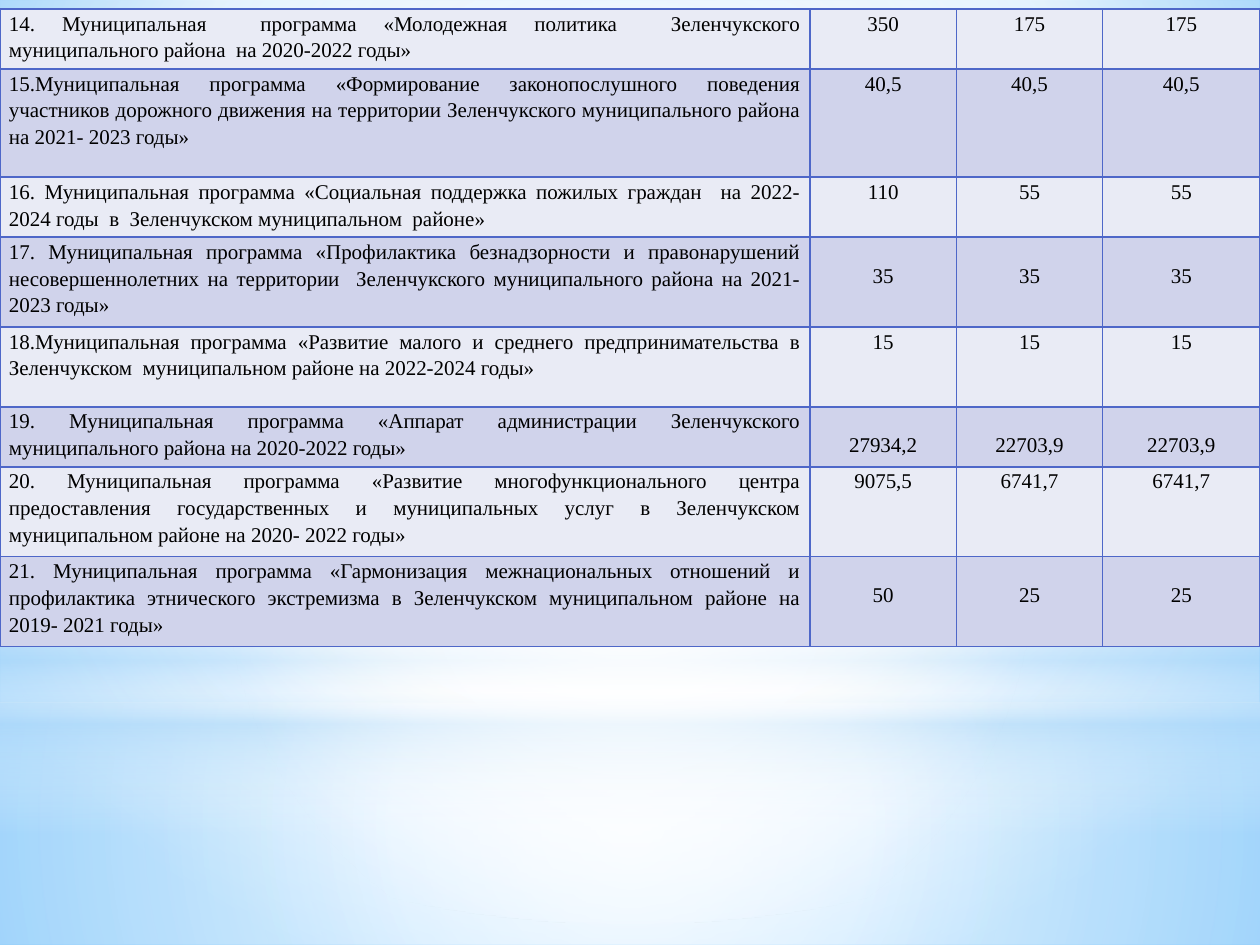
"""Build the slide listing municipal programmes 14 to 21 with their funding."""
from typing import NamedTuple

from lxml import etree
from pptx import Presentation
from pptx.dml.color import RGBColor
from pptx.enum.shapes import MSO_SHAPE
from pptx.enum.text import PP_ALIGN
from pptx.oxml.ns import qn
from pptx.util import Cm, Pt

RECTANGLE, OVAL = MSO_SHAPE.RECTANGLE, MSO_SHAPE.OVAL
JUSTIFY, CENTER = PP_ALIGN.JUSTIFY, PP_ALIGN.CENTER
SLIDE_WIDTH, SLIDE_HEIGHT = 25.4, 19.05
FONT_NAME = "Times New Roman"
TEXT_COLOR, BORDER_COLOR = "000000", "4E67C8"
BAND_COLORS = ("E9EBF5", "D0D3EB")
WHITE, SKY = "FFFFFF", "B4DCFA"
TABLE_TOP = 0.18
COLUMN_WIDTHS = (16.33, 2.95, 2.95, 3.17)
SIDE_MARGIN, LOWERED_MARGIN = 0.18, 0.48
CENTERED_FOCUS = (50, 50, 50, 50)


class Stop(NamedTuple):
    """A gradient stop: position, colour and opacity in percent."""
    position: int
    color: str
    opacity: int = 100


class Glow(NamedTuple):
    """A full-width gradient layer; without a focus it runs downwards."""
    preset: MSO_SHAPE
    top: float
    height: float
    stops: tuple[Stop, ...]
    focus: tuple[int, ...] = ()


class Programme(NamedTuple):
    """A table row: title, three amounts, height and amount position."""
    title: str
    amounts: tuple[str, str, str]
    height: float
    lowered: bool = False


BACKGROUND_STOPS = (Stop(0, "9ED5FF"), Stop(60, WHITE), Stop(100, "5BB9FF"))
BACKGROUND_FOCUS = (20, 10, 20, 60)

GLOWS = (
    Glow(RECTANGLE, 14.17, 4.88,
         (Stop(0, WHITE, 91), Stop(37, WHITE, 76), Stop(100, SKY, 79)), CENTERED_FOCUS),
    Glow(RECTANGLE, 0, 14.17,
         (Stop(0, WHITE, 89), Stop(48, WHITE, 62), Stop(100, SKY, 79)), CENTERED_FOCUS),
    Glow(RECTANGLE, 10.46, 6.35,
         (Stop(0, WHITE, 0), Stop(29, WHITE, 30), Stop(45, SKY, 40),
          Stop(55, WHITE, 26), Stop(65, SKY, 60), Stop(100, WHITE, 0))),
    Glow(OVAL, 4.45, 14.17, (Stop(0, WHITE), Stop(56, WHITE, 0)), CENTERED_FOCUS),
)

PROGRAMMES = (
    Programme("14. Муниципальная  программа «Молодежная политика  Зеленчукского "
              "муниципального района  на 2020-2022 годы»", ("350", "175", "175"), 1.21),
    Programme("15.Муниципальная программа «Формирование законопослушного поведения "
              "участников дорожного движения на территории Зеленчукского муниципального "
              "района на 2021- 2023 годы»", ("40,5", "40,5", "40,5"), 2.18),
    Programme("16. Муниципальная программа «Социальная поддержка пожилых граждан  на "
              "2022-2024 годы  в  Зеленчукском муниципальном  районе»",
              ("110", "55", "55"), 1.21),
    Programme("17. Муниципальная программа «Профилактика безнадзорности и правонарушений "
              "несовершеннолетних на территории  Зеленчукского муниципального района на "
              "2021-2023 годы»", ("35", "35", "35"), 1.81, True),
    Programme("18.Муниципальная программа «Развитие малого и среднего "
              "предпринимательства в Зеленчукском  муниципальном районе на "
              "2022-2024 годы»", ("15", "15", "15"), 1.61),
    Programme("19. Муниципальная программа «Аппарат администрации Зеленчукского "
              "муниципального района на 2020-2022 годы»",
              ("27934,2", "22703,9", "22703,9"), 1.21, True),
    Programme("20. Муниципальная программа «Развитие многофункционального центра "
              "предоставления государственных и муниципальных услуг в Зеленчукском "
              "муниципальном районе на 2020- 2022 годы»",
              ("9075,5", "6741,7", "6741,7"), 1.81),
    Programme("21. Муниципальная программа «Гармонизация межнациональных отношений и "
              "профилактика этнического экстремизма в Зеленчукском муниципальном районе "
              "на 2019- 2021 годы»", ("50", "25", "25"), 1.81, True),
)


def color(value: str) -> RGBColor:
    """Return the colour for a hex string."""
    return RGBColor.from_string(value)


def add_xml(parent, tag: str, **attributes):
    """Append a DrawingML child with the given attributes."""
    return etree.SubElement(parent, qn(f"a:{tag}"),
                            {key: str(value) for key, value in attributes.items()})


def set_gradient(fill, owner, stops: tuple[Stop, ...], focus: tuple[int, ...]) -> None:
    """Fill the owner element with a circular or downward gradient."""
    fill.gradient()
    gradient = owner.xpath(".//a:gradFill")[0]
    for child in list(gradient):
        gradient.remove(child)
    stop_list = add_xml(gradient, "gsLst")
    for stop in stops:
        entry = add_xml(stop_list, "gs", pos=stop.position * 1000)
        tint = add_xml(entry, "srgbClr", val=stop.color)
        if stop.opacity < 100:
            add_xml(tint, "alpha", val=stop.opacity * 1000)
    if focus:
        sides = {side: value * 1000 for side, value in zip("ltrb", focus)}
        add_xml(add_xml(gradient, "path", path="circle"), "fillToRect", **sides)
    else:
        add_xml(gradient, "lin", ang=90 * 60000, scaled=0)


def add_glow(slide, glow: Glow) -> None:
    """Draw one gradient layer across the slide."""
    layer = slide.shapes.add_shape(glow.preset, Cm(0), Cm(glow.top),
                                   Cm(SLIDE_WIDTH), Cm(glow.height))
    layer.shadow.inherit = False
    layer.line.fill.background()
    set_gradient(layer.fill, layer._element, glow.stops, glow.focus)


def fill_cell(cell, text: str, alignment: PP_ALIGN, band: str, top_margin: float) -> None:
    """Write and format one table cell."""
    cell.margin_left = cell.margin_right = Cm(SIDE_MARGIN)
    cell.margin_top, cell.margin_bottom = Cm(top_margin), Cm(0)
    properties = cell._tc.get_or_add_tcPr()
    for edge in ("lnL", "lnR", "lnT", "lnB"):
        border = add_xml(properties, edge, w=Pt(1))
        add_xml(add_xml(border, "solidFill"), "srgbClr", val=BORDER_COLOR)
    cell.fill.solid()
    cell.fill.fore_color.rgb = color(band)
    cell.text = text
    paragraph = cell.text_frame.paragraphs[0]
    paragraph.alignment = alignment
    paragraph.line_spacing = 1.15
    paragraph.font.name = FONT_NAME
    paragraph.font.size = Pt(12)
    paragraph.font.color.rgb = color(TEXT_COLOR)


def add_programme_table(slide) -> None:
    """Draw the table of programmes with alternating row colours."""
    total_height = sum(programme.height for programme in PROGRAMMES)
    table = slide.shapes.add_table(len(PROGRAMMES), len(COLUMN_WIDTHS), Cm(0), Cm(TABLE_TOP),
                                   Cm(SLIDE_WIDTH), Cm(total_height)).table
    table.first_row = table.horz_banding = False
    for column, width in zip(table.columns, COLUMN_WIDTHS):
        column.width = Cm(width)
    for index, programme in enumerate(PROGRAMMES):
        row = table.rows[index]
        row.height = Cm(programme.height)
        band = BAND_COLORS[index % 2]
        title_cell, *amount_cells = row.cells
        fill_cell(title_cell, programme.title, JUSTIFY, band, 0)
        amount_margin = LOWERED_MARGIN if programme.lowered else 0
        for cell, amount in zip(amount_cells, programme.amounts):
            fill_cell(cell, amount, CENTER, band, amount_margin)


def main() -> None:
    """Assemble and save the presentation."""
    presentation = Presentation()
    presentation.slide_width, presentation.slide_height = Cm(SLIDE_WIDTH), Cm(SLIDE_HEIGHT)
    slide = presentation.slides.add_slide(presentation.slide_layouts[6])
    set_gradient(slide.background.fill, slide._element, BACKGROUND_STOPS, BACKGROUND_FOCUS)
    for glow in GLOWS:
        add_glow(slide, glow)
    add_programme_table(slide)
    presentation.save("out.pptx")


if __name__ == "__main__":
    main()
